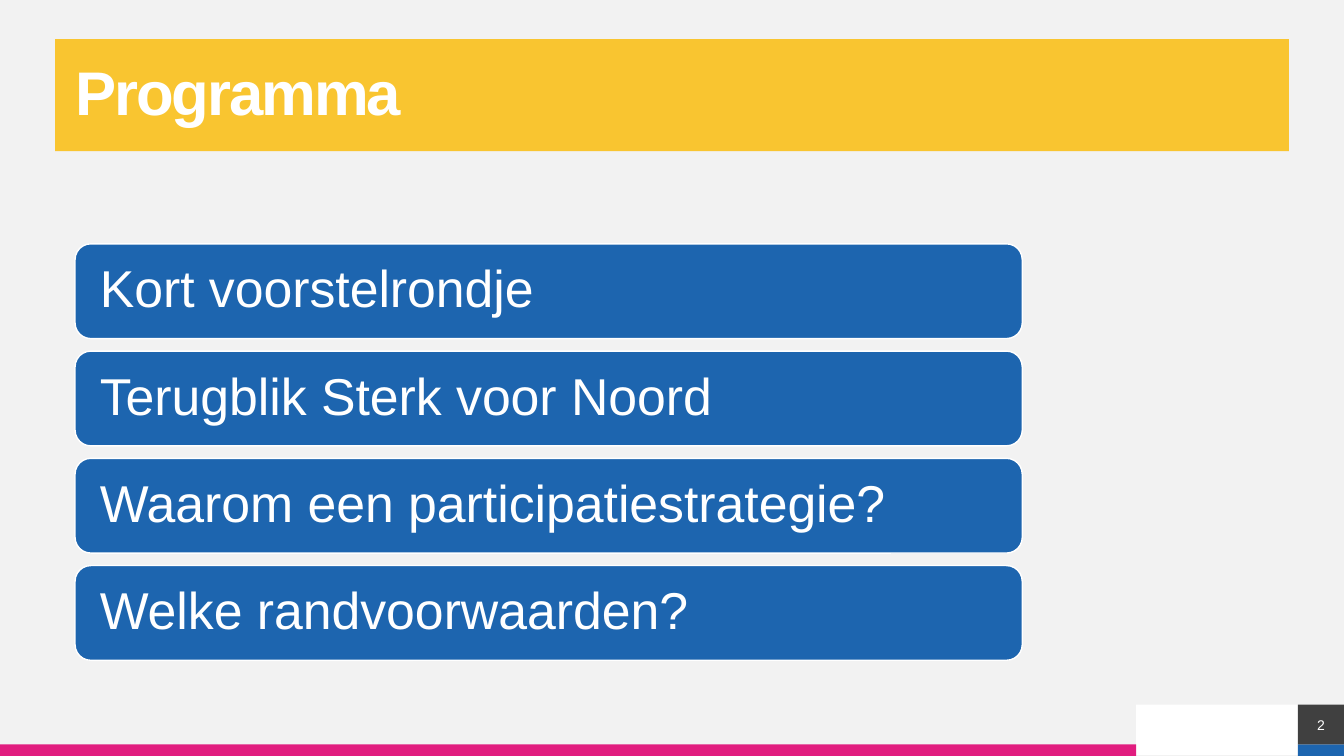
"""Build the programme slide with a title bar, four agenda items and a footer."""
from lxml.etree import SubElement
from pptx import Presentation
from pptx.dml.color import RGBColor
from pptx.enum.shapes import MSO_SHAPE
from pptx.enum.text import MSO_ANCHOR, PP_ALIGN
from pptx.oxml.ns import qn
from pptx.util import Pt


def rgb(color):
    return RGBColor.from_string(color)


def add_box(s, kind, box, fill, text="", size=10, inset=0):
    sp = s.shapes.add_shape(kind, *[Pt(v) for v in box])
    sp.shadow.inherit = False
    sp.fill.solid()
    sp.fill.fore_color.rgb = rgb(fill)
    sp.line.fill.background()
    if text:
        tf = sp.text_frame
        tf.word_wrap = True
        tf.vertical_anchor = MSO_ANCHOR.MIDDLE
        tf.margin_left = tf.margin_right = Pt(inset)
        tf.margin_top = tf.margin_bottom = Pt(inset)
        p = tf.paragraphs[0]
        p.text = text
        p.alignment = PP_ALIGN.LEFT
        p.line_spacing = 0.9
        p.font.name = "Arial"
        p.font.size = Pt(size)
        p.font.color.rgb = rgb("FFFFFF")
    return sp


prs = Presentation()
prs.slide_width, prs.slide_height = Pt(960), Pt(540)
s = prs.slides.add_slide(prs.slide_layouts[6])
s.background.fill.solid()
s.background.fill.fore_color.rgb = rgb("F2F2F2")

footer = [
    ((811.5, 503.3, 115.5, 36), "FFFFFF"),
    ((0, 531.7, 811.5, 8.3), "E11D7F"),
    ((927, 531.7, 33, 8.3), "1D65AF"),
]
for box, fill in footer:
    add_box(s, MSO_SHAPE.RECTANGLE, box, fill)

title = add_box(s, MSO_SHAPE.RECTANGLE, (39.4, 28, 881.3, 80), "FBBA00",
                "Programma", 44, 14.4)
p = title.text_frame.paragraphs[0]
p.font.bold = True
p.runs[0].font._element.set("spc", "-150")
color = title.fill._xPr.find(qn("a:solidFill"))[0]
SubElement(color, qn("a:alpha")).set("val", "80000")

number = add_box(s, MSO_SHAPE.RECTANGLE, (927, 503.3, 33, 28.4), "404040", "2")
p = number.text_frame.paragraphs[0]
p.alignment = PP_ALIGN.CENTER
p.line_spacing = 1.0

agenda = [
    "Kort voorstelrondje",
    "Terugblik Sterk voor Noord",
    "Waarom een participatiestrategie?",
    "Welke randvoorwaarden?",
]
for i, item in enumerate(agenda):
    sp = add_box(s, MSO_SHAPE.ROUNDED_RECTANGLE,
                 (53.6, 174.2 + i * 76.6, 676.6, 67.7), "1D65AF", item, 37, 14.4)
    sp.line.color.rgb = rgb("FFFFFF")
    sp.line.width = Pt(1)

prs.save("out.pptx")
